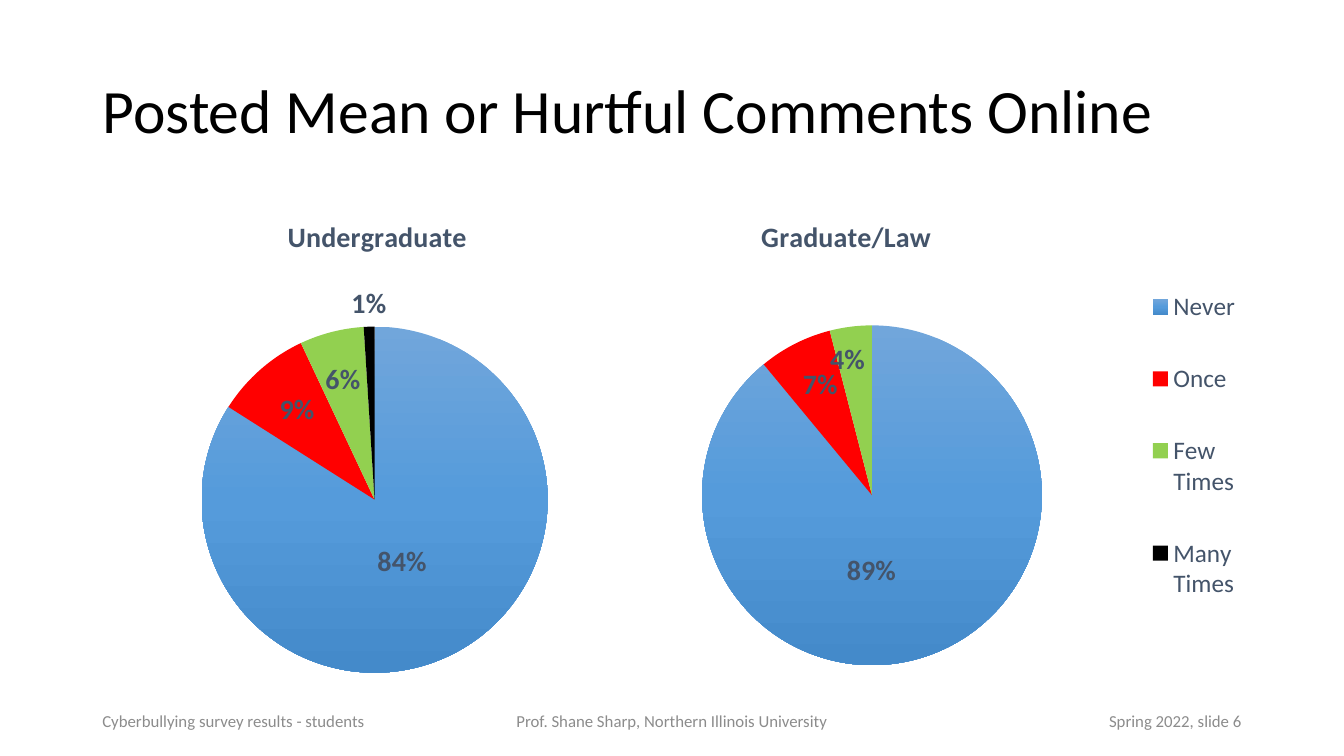
from copy import deepcopy
from dataclasses import dataclass

from pptx import Presentation
from pptx.chart.data import CategoryChartData
from pptx.dml.color import RGBColor
from pptx.enum.chart import XL_CHART_TYPE as ChartType
from pptx.enum.chart import XL_LABEL_POSITION as LabelPosition
from pptx.enum.chart import XL_LEGEND_POSITION as LegendPosition
from pptx.enum.text import MSO_ANCHOR as Anchor
from pptx.enum.text import PP_ALIGN as Align
from pptx.oxml import parse_xml
from pptx.oxml.ns import nsdecls, qn
from pptx.util import Pt


@dataclass(frozen=True)
class Theme:
    font: str = "Calibri"
    title: str = "000000"
    chart: str = "44546A"
    footer: str = "8C8C8C"
    gradient: tuple = ((0, "71A6DB"), (0.5, "559BDB"), (1, "448ACA"))
    slices: tuple = ("FF0000", "92D050", "000000")
    title_size: int = 44
    label_size: int = 20
    legend_size: int = 18
    footer_size: int = 12


THEME = Theme()
TITLE = "Posted Mean or Hurtful Comments Online"
ANSWERS = ("Never", "Once", "Few Times", "Many Times")
CHARTS = [
    {
        "title": "Undergraduate", "values": (84, 9, 6, 1),
        "box": (66, 144, 402, 366.5), "title_at": (0.338, 0.02),
        "pie": (0.194, 0.243, 0.615, 0.676), "legend": None,
        "shifts": ((-0.025, -0.027), (-0.036, -0.05), (-0.018, -0.07)),
    },
    {
        "title": "Graduate/Law", "values": (89, 7, 4, 0),
        "box": (428.5, 144, 465, 366.5), "title_at": (0.24, 0.02),
        "pie": (0.157, 0.24, 0.522, 0.665), "legend": (0.83, 0.095, 0.165, 0.76),
        "shifts": ((-0.045, -0.01), (-0.02, -0.068), (-0.021, -0.1)),
    },
]
FOOTERS = [
    ("Cyberbullying survey results - students", 66, 216, Align.LEFT),
    ("Prof. Shane Sharp, Northern Illinois University", 318, 324, Align.CENTER),
    ("Spring 2022, slide 6", 678, 216, Align.RIGHT),
]


def style_font(font, size, color, bold=False):
    font.name, font.size, font.bold = THEME.font, Pt(size), bold
    font.color.rgb = RGBColor.from_string(color)


def write(frame, text, *, size, color, bold=False, align=Align.LEFT, spacing=None):
    frame.word_wrap = True
    frame.vertical_anchor = Anchor.MIDDLE
    paragraph = frame.paragraphs[0]
    paragraph.alignment = align
    paragraph.line_spacing = spacing
    run = paragraph.add_run()
    run.text = text
    style_font(run.font, size, color, bold)


def place(shape, left, top, width, height):
    shape.left, shape.top, shape.width, shape.height = map(Pt, (left, top, width, height))


def set_layout(element, index, values, mode="edge", inner=False):
    for layout in element.findall(qn("c:layout")):
        element.remove(layout)
    target = '<c:layoutTarget val="inner"/>' if inner else ""
    modes = f'<c:xMode val="{mode}"/><c:yMode val="{mode}"/>' if mode == "edge" else ""
    numbers = "".join(f'<c:{name} val="{value}"/>' for name, value in zip("xywh", values))
    element.insert(index, parse_xml(
        f'<c:layout {nsdecls("c")}><c:manualLayout>{target}{modes}{numbers}'
        "</c:manualLayout></c:layout>"))


def fill_slices(series):
    fill = series.points[0].format.fill
    fill.gradient()
    fill.gradient_angle = 270
    stop_list = series._element.find(".//" + qn("a:gsLst"))
    stop_list.append(deepcopy(stop_list[-1]))
    for stop, (position, color) in zip(fill.gradient_stops, THEME.gradient):
        stop.position = position
        stop.color.rgb = RGBColor.from_string(color)
    for index, color in enumerate(THEME.slices, 1):
        fill = series.points[index].format.fill
        fill.solid()
        fill.fore_color.rgb = RGBColor.from_string(color)


def label_slices(series, values, shifts):
    labels = series.data_labels
    labels.show_percentage, labels.show_value = True, False
    labels.number_format, labels.number_format_is_linked = "0%", False
    labels.position = LabelPosition.OUTSIDE_END
    style_font(labels.font, THEME.label_size, THEME.chart, True)
    for index, value in enumerate(values):
        if index >= len(shifts) and value:
            continue
        label = series.points[index].data_label
        style_font(label.font, THEME.label_size, THEME.chart, True)
        label.position = LabelPosition.CENTER
        element = series._element.findall(".//" + qn("c:dLbl"))[index]
        if value:
            set_layout(element, 1, shifts[index], mode="factor")
            element.find(qn("c:showVal")).set("val", "0")
            element.find(qn("c:showPercent")).set("val", "1")
        else:
            for child in list(element)[1:]:
                element.remove(child)
            element.append(parse_xml(f'<c:delete {nsdecls("c")} val="1"/>'))


def add_pie(slide, item):
    data = CategoryChartData()
    data.categories = ANSWERS
    data.add_series("Series 1", item["values"])
    chart = slide.shapes.add_chart(ChartType.PIE, *map(Pt, item["box"]), data).chart
    style_font(chart.font, 10, THEME.title)
    chart.has_title = True
    write(chart.chart_title.text_frame, item["title"], size=THEME.label_size,
          color=THEME.chart, bold=True, align=Align.CENTER)
    set_layout(chart.chart_title._element, 1, item["title_at"])
    set_layout(chart._chartSpace.find(".//" + qn("c:plotArea")), 0, item["pie"], inner=True)
    chart.has_legend = item["legend"] is not None
    if chart.has_legend:
        chart.legend.position = LegendPosition.RIGHT
        chart.legend.include_in_layout = False
        style_font(chart.legend.font, THEME.legend_size, THEME.chart)
        set_layout(chart.legend._element, 1, item["legend"])
    plot = chart.plots[0]
    plot.vary_by_categories = True
    series = plot.series[0]
    fill_slices(series)
    label_slices(series, item["values"], item["shifts"])


def main():
    presentation = Presentation()
    presentation.slide_width, presentation.slide_height = Pt(960), Pt(540)
    slide = presentation.slides.add_slide(presentation.slide_layouts[5])
    title = slide.shapes.title
    place(title, 66, 28.75, 828, 104.4)
    write(title.text_frame, TITLE, size=THEME.title_size, color=THEME.title, spacing=0.9)
    for item in CHARTS:
        add_pie(slide, item)
    for text, left, width, align in FOOTERS:
        box = slide.shapes.add_textbox(Pt(left), Pt(500.5), Pt(width), Pt(28.75))
        write(box.text_frame, text, size=THEME.footer_size, color=THEME.footer, align=align)
    presentation.save("out.pptx")


if __name__ == "__main__":
    main()
